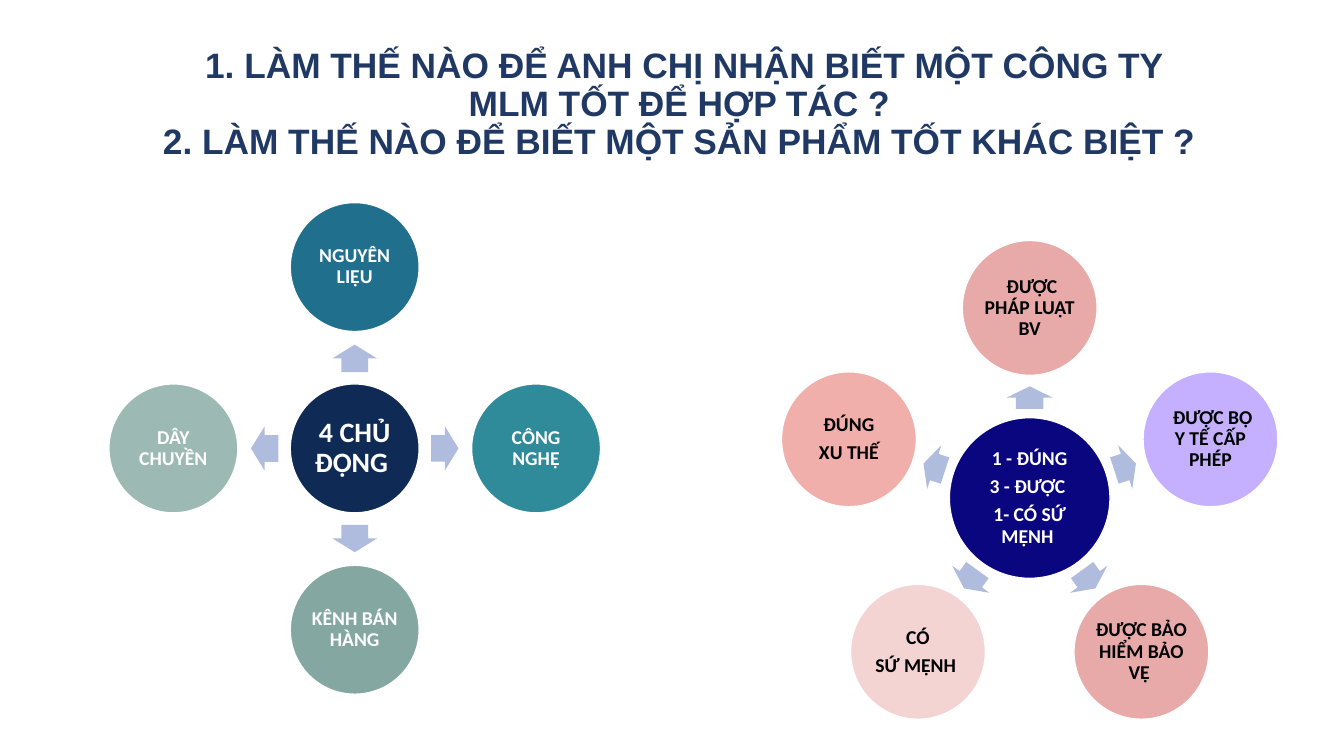
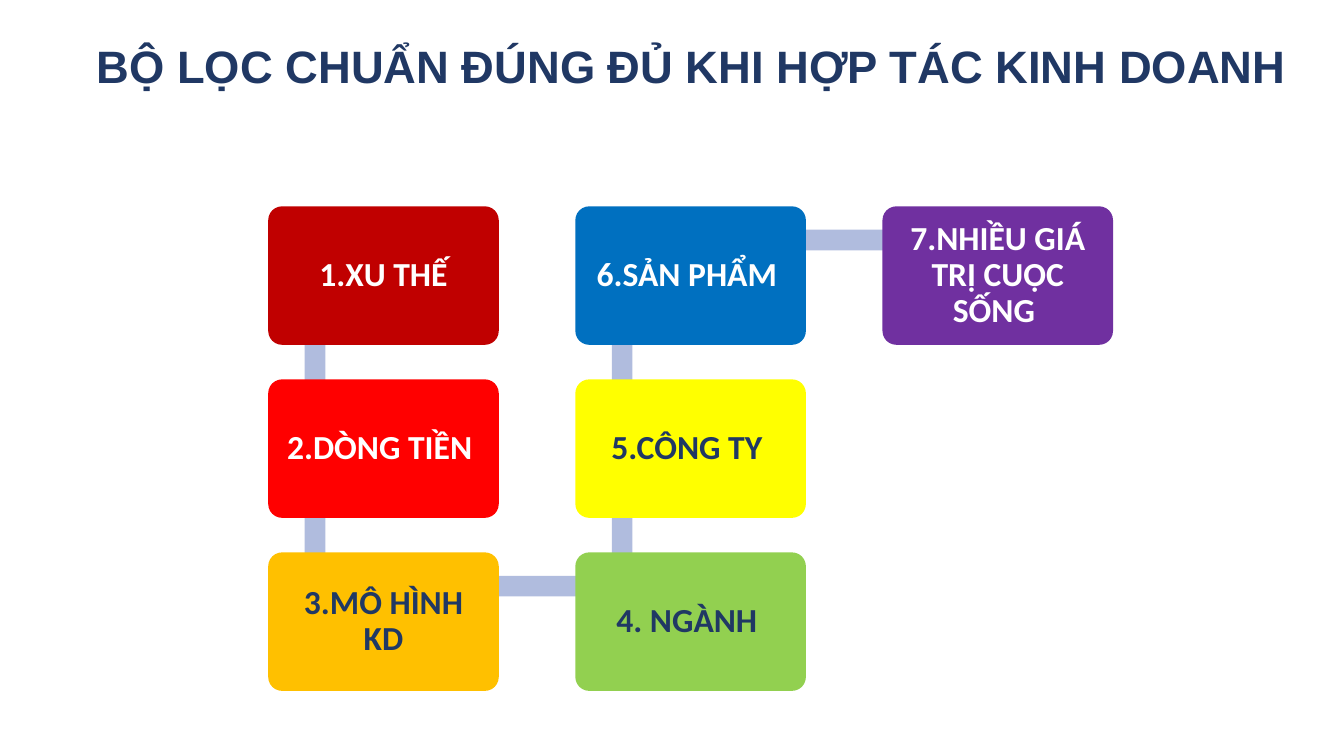
"""Build two slides: a pair of radial diagrams and a seven-step filter."""
import itertools
import math
from dataclasses import dataclass

import pptx
import pptx.dml.color
import pptx.enum.shapes
import pptx.enum.text
import pptx.shapes.autoshape
import pptx.slide
import pptx.text.text
import pptx.util

Cm = pptx.util.Cm
Pt = pptx.util.Pt
RGBColor = pptx.dml.color.RGBColor
SHAPE = pptx.enum.shapes.MSO_SHAPE
ANCHOR = pptx.enum.text.MSO_ANCHOR

WHITE = RGBColor(0xFF, 0xFF, 0xFF)
BLACK = RGBColor(0x00, 0x00, 0x00)
NAVY = RGBColor(0x20, 0x38, 0x64)
LINK = RGBColor(0xB0, 0xBC, 0xDE)
MIDNIGHT = RGBColor(0x0F, 0x2A, 0x55)
OCEAN = RGBColor(0x20, 0x6F, 0x8C)
TEAL = RGBColor(0x2F, 0x8A, 0x99)
SAGE = RGBColor(0x84, 0xA7, 0xA1)
MIST = RGBColor(0x9D, 0xB9, 0xB4)
INDIGO = RGBColor(0x0A, 0x06, 0x80)
ROSE = RGBColor(0xE8, 0xA9, 0xA9)
LILAC = RGBColor(0xC4, 0xB0, 0xFF)
BLUSH = RGBColor(0xF4, 0xD3, 0xD3)
CORAL = RGBColor(0xF1, 0xAF, 0xAB)
CRIMSON = RGBColor(0xC0, 0x00, 0x00)
RED = RGBColor(0xFF, 0x00, 0x00)
AMBER = RGBColor(0xFF, 0xC0, 0x00)
GREEN = RGBColor(0x92, 0xD0, 0x50)
YELLOW = RGBColor(0xFF, 0xFF, 0x00)
BLUE = RGBColor(0x00, 0x70, 0xC0)
PURPLE = RGBColor(0x70, 0x30, 0xA0)


@dataclass(frozen=True)
class Item:
    """A labelled, coloured circle or box."""
    text: str
    fill: RGBColor
    color: RGBColor = WHITE
    size: float = 14


@dataclass(frozen=True)
class Wheel:
    """A hub with satellites at equal angles, lengths in centimetres."""
    x: float
    y: float
    hub: Item
    hub_size: float
    satellites: tuple[Item, ...]
    satellite_size: float
    ring: float
    arrow_ring: float
    arrow_w: float
    arrow_h: float


WHEELS = (
    Wheel(8.94, 11.3, Item("4 CHỦ ĐỘNG ", MIDNIGHT, size=20), 3.25, (
        Item("NGUYÊN LIỆU", OCEAN),
        Item("CÔNG NGHỆ", TEAL),
        Item("KÊNH BÁN HÀNG", SAGE),
        Item("DÂY CHUYỀN", MIST),
    ), 3.25, 4.57, 2.27, 0.69, 1.12),
    Wheel(25.95, 12.55, Item("1 - ĐÚNG\n3 - ĐƯỢC \n1- CÓ SỨ MỆNH ", INDIGO), 4.05, (
        Item(" ĐƯỢC PHÁP LUẬT BV", ROSE, BLACK),
        Item(" ĐƯỢC BỘ Y TẾ CẤP PHÉP", LILAC, BLACK),
        Item("ĐƯỢC BẢO HIỂM BẢO VỆ ", ROSE, BLACK),
        Item(" CÓ \nSỨ MỆNH ", BLUSH, BLACK),
        Item(" ĐÚNG \nXU THẾ", CORAL, BLACK),
    ), 3.4, 4.79, 2.53, 0.57, 1.16),
)

STEPS = (
    Item("1.XU THẾ", CRIMSON, size=24),
    Item("2.DÒNG TIỀN ", RED, size=24),
    Item("3.MÔ HÌNH KD", AMBER, NAVY, 24),
    Item("4. NGÀNH ", GREEN, NAVY, 24),
    Item("5.CÔNG TY ", YELLOW, NAVY, 24),
    Item("6.SẢN PHẨM ", BLUE, size=24),
    Item("7.NHIỀU GIÁ TRỊ CUỘC SỐNG ", PURPLE, size=24),
)
ROWS = 3
GRID_X, GRID_Y = 6.76, 5.2
COL_STEP, ROW_STEP = 7.74, 4.36
BOX_W, BOX_H = 5.81, 3.49
ANCHOR_X, ANCHOR_Y = 1.18, 0.85
BAR = 0.52


def write(tf: pptx.text.text.TextFrame, text: str, *, size: float, color: RGBColor,
          font: str = "Calibri", after: float = 0.35, anchor: ANCHOR = ANCHOR.MIDDLE,
          inset: tuple[float, float] = (0.05, 0.05)) -> None:
    """Write bold centred paragraphs, one for each line of text."""
    tf.word_wrap = True
    tf.auto_size = pptx.enum.text.MSO_AUTO_SIZE.NONE
    tf.vertical_anchor = anchor
    tf.margin_left = tf.margin_right = Cm(inset[0])
    tf.margin_top = tf.margin_bottom = Cm(inset[1])
    for i, line in enumerate(text.split("\n")):
        p = tf.add_paragraph() if i else tf.paragraphs[0]
        p.alignment = pptx.enum.text.PP_ALIGN.CENTER
        p.line_spacing = 0.9
        p.space_before = Pt(0)
        p.space_after = Pt(size * after)
        r = p.add_run()
        r.text = line
        r.font.name = font
        r.font.size = Pt(size)
        r.font.bold = True
        r.font.color.rgb = color


def add_shape(s: pptx.slide.Slide, kind: SHAPE, x: float, y: float, w: float, h: float,
              fill: RGBColor) -> pptx.shapes.autoshape.Shape:
    """Add a flat shape centred on a point given in centimetres."""
    sp = s.shapes.add_shape(kind, Cm(x - w / 2), Cm(y - h / 2), Cm(w), Cm(h))
    sp.shadow.inherit = False
    sp.fill.solid()
    sp.fill.fore_color.rgb = fill
    sp.line.fill.background()
    return sp


def add_titled_slide(prs: pptx.presentation.Presentation, text: str, size: float,
                     x: float, y: float, w: float, h: float) -> pptx.slide.Slide:
    """Add a title-only slide and format its title."""
    s = prs.slides.add_slide(prs.slide_layouts[5])
    sp = s.shapes.title
    sp.left, sp.top, sp.width, sp.height = Cm(x), Cm(y), Cm(w), Cm(h)
    write(sp.text_frame, text, size=size, color=NAVY, font="Arial", after=0,
          anchor=ANCHOR.BOTTOM, inset=(0.25, 0.13))
    return s


def add_circle(s: pptx.slide.Slide, item: Item, x: float, y: float, d: float) -> None:
    """Add a labelled circle with a thin white outline."""
    sp = add_shape(s, SHAPE.OVAL, x, y, d, d, item.fill)
    sp.line.color.rgb = WHITE
    sp.line.width = Pt(1)
    write(sp.text_frame, item.text, size=item.size, color=item.color)


def add_wheel(s: pptx.slide.Slide, wheel: Wheel) -> None:
    """Draw the hub, then an arrow and a circle for each satellite."""
    add_circle(s, wheel.hub, wheel.x, wheel.y, wheel.hub_size)
    for i, item in enumerate(wheel.satellites):
        angle = 360 * i / len(wheel.satellites) - 90
        dx, dy = math.cos(math.radians(angle)), math.sin(math.radians(angle))
        sp = add_shape(s, SHAPE.RIGHT_ARROW, wheel.x + wheel.arrow_ring * dx,
                       wheel.y + wheel.arrow_ring * dy, wheel.arrow_w, wheel.arrow_h, LINK)
        sp.adjustments[0], sp.adjustments[1] = 0.6, 0.5
        sp.rotation = angle % 360
        add_circle(s, item, wheel.x + wheel.ring * dx, wheel.y + wheel.ring * dy,
                   wheel.satellite_size)


def step_corner(i: int) -> tuple[float, float]:
    """Return the top-left corner of a step on the snaking grid."""
    col, row = divmod(i, ROWS)
    if col % 2:
        row = ROWS - 1 - row
    return GRID_X + col * COL_STEP, GRID_Y + row * ROW_STEP


def add_steps(s: pptx.slide.Slide) -> None:
    """Draw the linking bars, then the step boxes over them."""
    corners = [step_corner(i) for i in range(len(STEPS))]
    for (x1, y1), (x2, y2) in itertools.pairwise(corners):
        add_shape(s, SHAPE.RECTANGLE, (x1 + x2) / 2 + ANCHOR_X, (y1 + y2) / 2 + ANCHOR_Y,
                  max(abs(x2 - x1), BAR), max(abs(y2 - y1), BAR), LINK)
    for item, (x, y) in zip(STEPS, corners):
        sp = add_shape(s, SHAPE.ROUNDED_RECTANGLE, x + BOX_W / 2, y + BOX_H / 2,
                       BOX_W, BOX_H, item.fill)
        sp.adjustments[0] = 0.1
        write(sp.text_frame, item.text, size=item.size, color=item.color, inset=(0.25, 0.25))


def main() -> None:
    """Build and save the presentation."""
    prs = pptx.Presentation()
    prs.slide_width, prs.slide_height = Cm(33.87), Cm(19.05)
    s = add_titled_slide(
        prs, "1. LÀM THẾ NÀO ĐỂ ANH CHỊ NHẬN BIẾT MỘT CÔNG TY MLM TỐT ĐỂ HỢP TÁC ? \n"
        "2. LÀM THẾ NÀO ĐỂ BIẾT MỘT SẢN PHẨM TỐT KHÁC BIỆT ? ",
        25.2, 3.81, 0.43, 26.87, 3.78)
    for wheel in WHEELS:
        add_wheel(s, wheel)
    s = add_titled_slide(prs, "BỘ LỌC CHUẨN ĐÚNG ĐỦ KHI HỢP TÁC KINH DOANH",
                         32.4, 1.98, 0.76, 30.89, 1.73)
    add_steps(s)
    prs.save("out.pptx")


if __name__ == "__main__":
    main()
